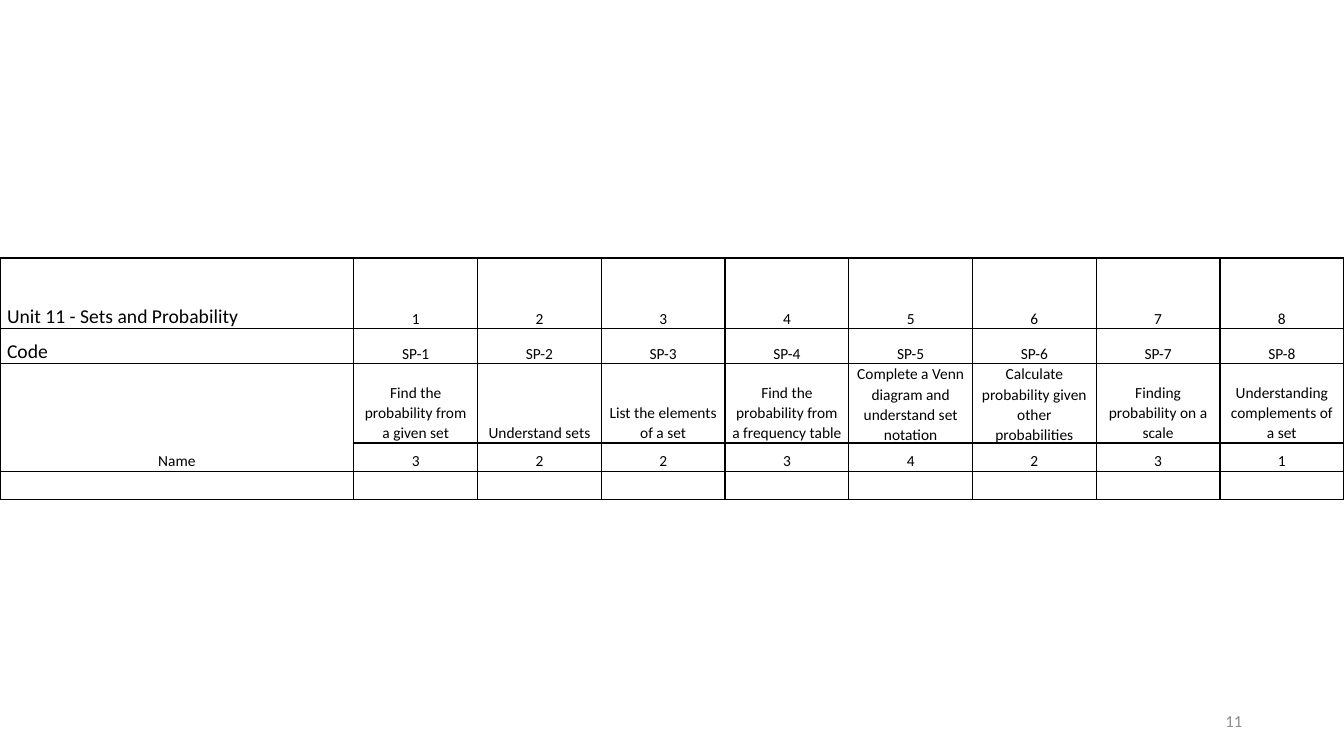
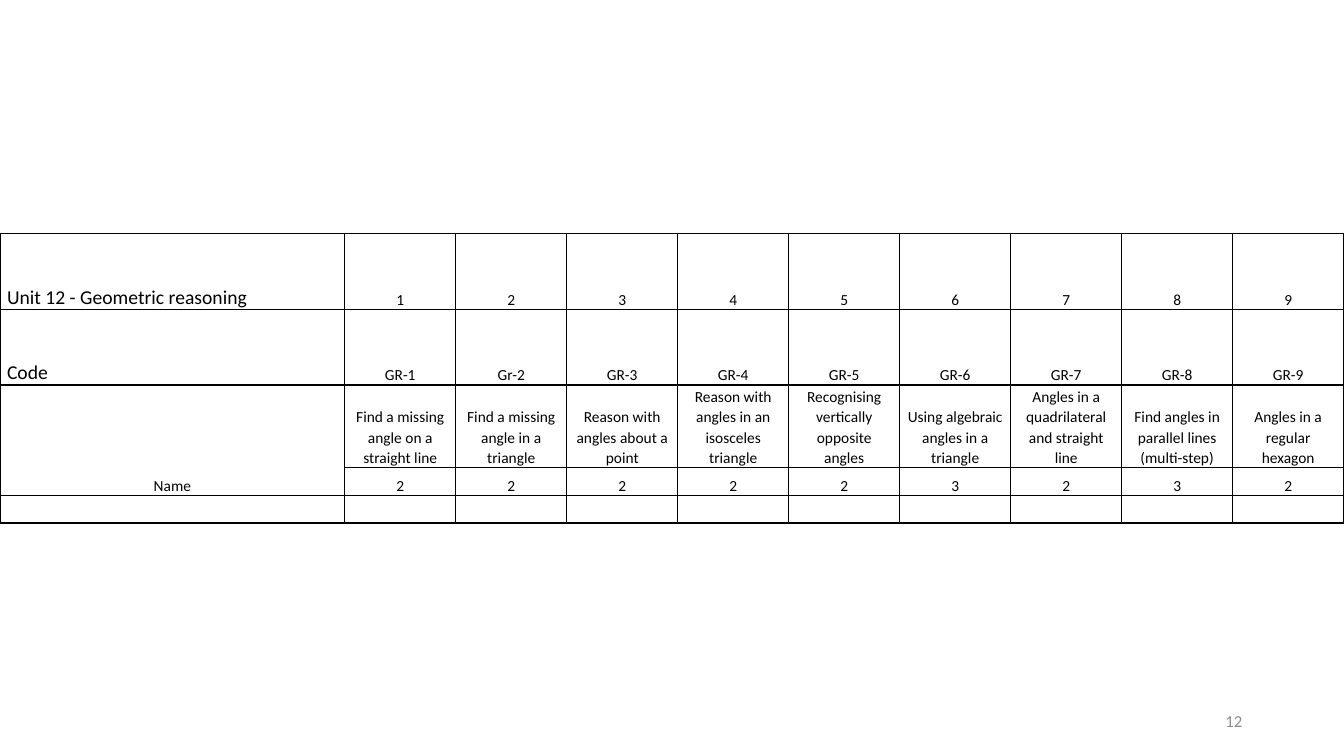
import pptx
import pptx.dml.color
import pptx.enum.text
import pptx.oxml.ns
import pptx.util
from lxml import etree
from pptx.util import Inches, Pt

BLACK = pptx.dml.color.RGBColor(0x00, 0x00, 0x00)
GREY = pptx.dml.color.RGBColor(0x8C, 0x8C, 0x8C)
FONT = "Calibri"
HEADING_SIZE = Pt(14)
BODY_SIZE = Pt(11)
PAGE_SIZE = Pt(12)
LINE_SPACING = 1.07
SIDE_INSET = Inches(0.07)
BORDER_WIDTH = Pt(1)
SLIDE_WIDTH = 13.33
PAGE_BOX = (9.42, 6.95, 3, 0.4)
ALIGN = pptx.enum.text.PP_ALIGN
ANCHOR = pptx.enum.text.MSO_ANCHOR
qn = pptx.oxml.ns.qn

UNITS = [
    {
        "page": "11",
        "title": "Unit 11 - Sets and Probability",
        "top": 2.56,
        "label_width": 3.51,
        "row_heights": [0.7, 0.35, 0.78, 0.28, 0.28],
        "skills": [
            ("SP-1", "Find the probability from a given set", "3"),
            ("SP-2", "Understand sets", "2"),
            ("SP-3", "List the elements of a set", "2"),
            ("SP-4", "Find the probability from a frequency table", "3"),
            ("SP-5", "Complete a Venn diagram and understand set notation", "4"),
            ("SP-6", "Calculate probability given other probabilities", "2"),
            ("SP-7", "Finding probability on a scale", "3"),
            ("SP-8", "Understanding complements of a set", "1"),
        ],
    },
    {
        "page": "12",
        "title": "Unit 12 - Geometric reasoning",
        "top": 2.32,
        "label_width": 3.42,
        "row_heights": [0.75, 0.75, 0.82, 0.28, 0.27],
        "skills": [
            ("GR-1", "Find a missing angle on a straight line", "2"),
            ("Gr-2", "Find a missing angle in a triangle", "2"),
            ("GR-3", "Reason with angles about a point", "2"),
            ("GR-4", "Reason with angles in an isosceles triangle", "2"),
            ("GR-5", "Recognising vertically opposite angles", "2"),
            ("GR-6", "Using algebraic angles in a triangle", "3"),
            ("GR-7", "Angles in a quadrilateral and straight line", "2"),
            ("GR-8", "Find angles in parallel lines (multi-step)", "3"),
            ("GR-9", "Angles in a regular hexagon", "2"),
        ],
    },
]


def style_font(font, size, color):
    font.name = FONT
    font.size = size
    font.color.rgb = color


def add_borders(cell):
    properties = cell._tc.get_or_add_tcPr()
    for position, side in enumerate(("a:lnL", "a:lnR", "a:lnT", "a:lnB")):
        border = etree.Element(qn(side), w=str(BORDER_WIDTH))
        fill = etree.SubElement(border, qn("a:solidFill"))
        etree.SubElement(fill, qn("a:srgbClr"), val=str(BLACK))
        properties.insert(position, border)


def fill_cell(cell, text, is_heading):
    cell.fill.background()
    cell.margin_left = cell.margin_right = SIDE_INSET
    cell.margin_top = cell.margin_bottom = 0
    cell.vertical_anchor = ANCHOR.BOTTOM
    add_borders(cell)
    paragraph = cell.text_frame.paragraphs[0]
    paragraph.alignment = ALIGN.LEFT if is_heading else ALIGN.CENTER
    paragraph.line_spacing = LINE_SPACING
    if text:
        paragraph.text = text
        style_font(paragraph.runs[0].font, HEADING_SIZE if is_heading else BODY_SIZE, BLACK)
    else:
        etree.SubElement(paragraph._p, qn("a:endParaRPr"), sz=str(int(BODY_SIZE.pt * 100)))


def add_skill_table(slide, unit, left, top, width):
    codes, names, marks = zip(*unit["skills"])
    count = len(codes)
    rows = [
        (unit["title"], *(str(number) for number in range(1, count + 1))),
        ("Code", *codes),
        ("Name", *names),
        ("", *marks),
        ("",) * (count + 1),
    ]
    heights = unit["row_heights"]
    table = slide.shapes.add_table(
        len(rows), count + 1, Inches(left), Inches(top), Inches(width), Inches(sum(heights))
    ).table
    table.first_row = table.horz_banding = False
    skill_width = (width - unit["label_width"]) / count
    for column, size in zip(table.columns, [unit["label_width"]] + [skill_width] * count):
        column.width = Inches(size)
    for row_index, (values, height) in enumerate(zip(rows, heights)):
        table.rows[row_index].height = Inches(height)
        for column_index, value in enumerate(values):
            is_heading = column_index == 0 and row_index < 2
            fill_cell(table.cell(row_index, column_index), value, is_heading)
    table.cell(2, 0).merge(table.cell(3, 0))


def add_page_number(slide, number, box):
    frame = slide.shapes.add_textbox(*(Inches(length) for length in box)).text_frame
    frame.word_wrap = True
    frame.vertical_anchor = ANCHOR.MIDDLE
    frame.text = number
    paragraph = frame.paragraphs[0]
    paragraph.alignment = ALIGN.RIGHT
    style_font(paragraph.runs[0].font, PAGE_SIZE, GREY)


def add_unit_slide(presentation, unit):
    slide = presentation.slides.add_slide(presentation.slide_layouts[6])
    add_page_number(slide, unit["page"], PAGE_BOX)
    add_skill_table(slide, unit, 0, unit["top"], SLIDE_WIDTH)


def main():
    presentation = pptx.Presentation()
    presentation.slide_width = Inches(SLIDE_WIDTH)
    presentation.slide_height = Inches(7.5)
    for unit in UNITS:
        add_unit_slide(presentation, unit)
    presentation.save("out.pptx")


if __name__ == "__main__":
    main()
